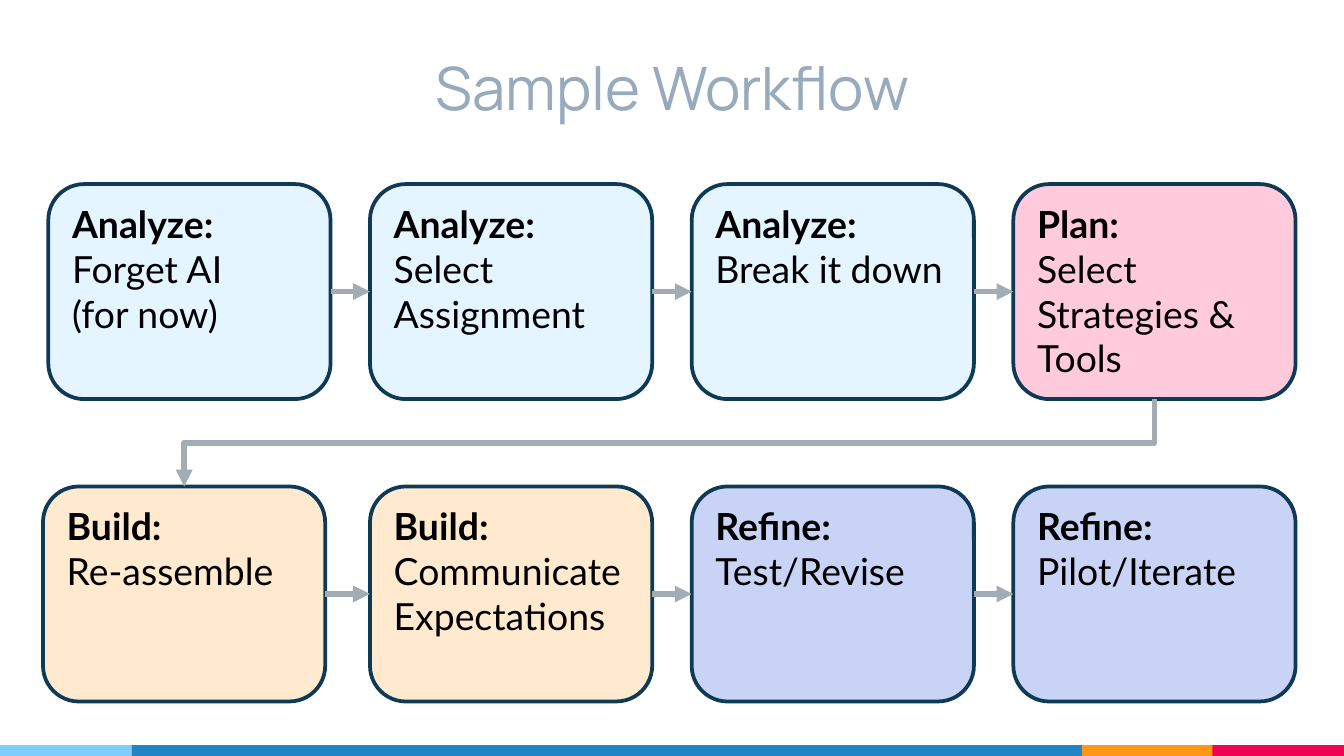
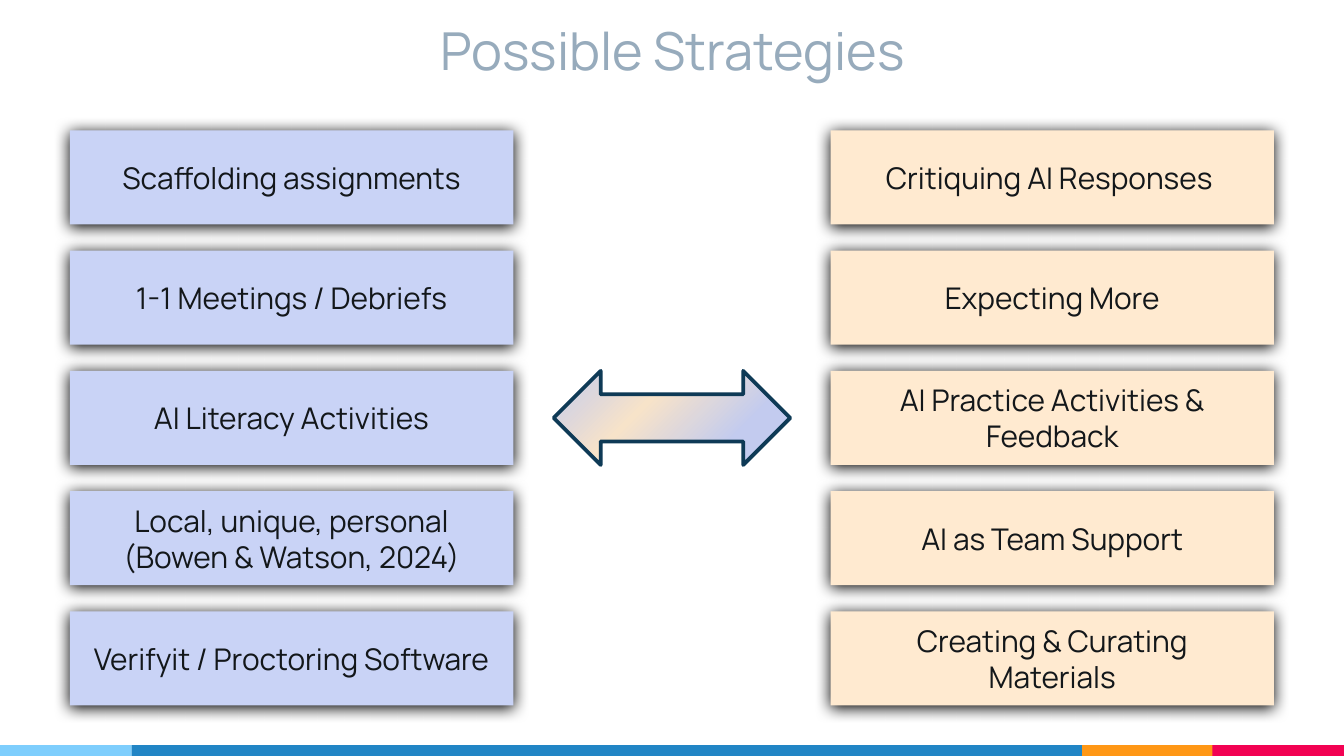
import copy

import pptx
import pptx.dml.color
import pptx.enum.shapes
import pptx.enum.text
import pptx.oxml.ns
import pptx.util
from lxml import etree

Inches, Pt = pptx.util.Inches, pptx.util.Pt
RGBColor = pptx.dml.color.RGBColor
Shape = pptx.enum.shapes.MSO_SHAPE
Connector = pptx.enum.shapes.MSO_CONNECTOR
Anchor = pptx.enum.text.MSO_ANCHOR
Align = pptx.enum.text.PP_ALIGN
qn = pptx.oxml.ns.qn

SKY = RGBColor(0x7E, 0xCE, 0xFD)
BLUE = RGBColor(0x21, 0x85, 0xC5)
ORANGE = RGBColor(0xFF, 0x97, 0x15)
RED = RGBColor(0xF2, 0x02, 0x53)
TITLE_GREY = RGBColor(0x97, 0xAB, 0xBC)
ARROW_GREY = RGBColor(0xA2, 0xAC, 0xB4)
NAVY = RGBColor(0x0E, 0x3A, 0x56)
BLACK = RGBColor(0x00, 0x00, 0x00)
INK = RGBColor(0x13, 0x17, 0x1A)
PALE_BLUE = RGBColor(0xE5, 0xF5, 0xFF)
PINK = RGBColor(0xFF, 0xCA, 0xDC)
PEACH = RGBColor(0xFF, 0xEA, 0xD0)
LAVENDER = RGBColor(0xC9, 0xD3, 0xF6)
BLEND_LAVENDER = RGBColor(0xC3, 0xCB, 0xEF)
BLEND_PEACH = RGBColor(0xF7, 0xE3, 0xC9)

# A 16:9 page
PAGE_WIDTH = 10
PAGE_HEIGHT = PAGE_WIDTH * 9 / 16

# Footer bands: left edge, width, colour
BAND_HEIGHT = 0.08
BANDS = [(8.05, 0.98, ORANGE), (9.02, 0.98, RED), (0, 0.98, SKY), (0.98, 7.07, BLUE)]

PHASE_FILLS = {"Analyze:": PALE_BLUE, "Plan:": PINK, "Build:": PEACH, "Refine:": LAVENDER}
STEP_SIZE = (2.1, 1.6)
# Workflow rows: left edge of the first step, top, steps
WORKFLOW = [
    (0.36, 1.37, [("Analyze:", "Forget AI \n(for now)"),
                  ("Analyze:", "Select Assignment"),
                  ("Analyze:", "Break it down"),
                  ("Plan:", "\nSelect Strategies & Tools")]),
    (0.32, 3.62, [("Build:", "\nRe-assemble"),
                  ("Build:", "Communicate Expectations"),
                  ("Refine:", "Test/Revise"),
                  ("Refine:", "Pilot/Iterate")]),
]

CARD_SIZE = (3.3, 0.7)
# Strategy columns: left edge, colour, cards
STRATEGIES = [
    (0.52, LAVENDER, ["Scaffolding assignments",
                      "1-1 Meetings / Debriefs",
                      "AI Literacy Activities",
                      "Local, unique, personal (Bowen & Watson, 2024)",
                      "Verifyit / Proctoring Software"]),
    (6.18, PEACH, ["Critiquing AI Responses ",
                   "Expecting More",
                   "AI Practice Activities & Feedback",
                   "AI as Team Support",
                   "Creating & Curating\vMaterials"]),
]
BLEND = [(0, BLEND_LAVENDER), (0.38, BLEND_PEACH), (0.75, BLEND_LAVENDER)]


def spread(first, last, count):
    """Evenly spaced positions from first to last."""
    return [first + (last - first) * i / (count - 1) for i in range(count)]


def set_font(font, name, size, color):
    font.name, font.size = name, Pt(size)
    font.color.rgb = color


def add_box(page, kind, left, top, size, fill=None, outline=None):
    box = page.shapes.add_shape(kind, Inches(left), Inches(top), *map(Inches, size))
    box.shadow.inherit = False
    if fill is not None:
        box.fill.solid()
        box.fill.fore_color.rgb = fill
    if outline is None:
        box.line.fill.background()
    else:
        box.line.color.rgb = outline
        box.line.width = Pt(2)
    return box


def add_page(deck, title, title_top, title_size):
    """Add a blank page with the footer bands and a title."""
    page = deck.slides.add_slide(deck.slide_layouts[6])
    for left, width, color in BANDS:
        add_box(page, Shape.RECTANGLE, left, PAGE_HEIGHT - BAND_HEIGHT,
                (width, BAND_HEIGHT), color)
    box = page.shapes.add_textbox(Inches(1.47), Inches(title_top), Inches(7.07), Inches(0.94))
    frame = box.text_frame
    frame.word_wrap = True
    frame.vertical_anchor = Anchor.BOTTOM
    frame.margin_top = frame.margin_bottom = Inches(0.1)
    para = frame.paragraphs[0]
    para.text = title
    para.alignment = Align.CENTER
    set_font(para.font, "Manrope", title_size, TITLE_GREY)
    return page


def add_step(page, left, top, phase, task):
    box = add_box(page, Shape.ROUNDED_RECTANGLE, left, top, STEP_SIZE, PHASE_FILLS[phase], NAVY)
    frame = box.text_frame
    frame.word_wrap = True
    frame.vertical_anchor = Anchor.TOP
    para = frame.paragraphs[0]
    para.alignment = Align.LEFT
    set_font(para.font, "Lato", 20, BLACK)
    heading = para.add_run()
    heading.text = f"{phase} "
    heading.font.bold = True
    for number, line in enumerate(task.split("\n")):
        if number:
            para.add_line_break()
        if line:
            para.add_run().text = line
    return box


def link(page, kind, start, start_site, end, end_site):
    """Join two boxes with an arrow; sites run top, left, bottom, right."""
    arrow = page.shapes.add_connector(kind, 0, 0, 0, 0)
    arrow.begin_connect(start, start_site)
    arrow.end_connect(end, end_site)
    arrow.line.color.rgb = ARROW_GREY
    arrow.line.width = Pt(3)
    properties = arrow._element.spPr
    etree.SubElement(properties.find(qn("a:ln")), qn("a:tailEnd"), type="triangle")
    etree.SubElement(properties, qn("a:effectLst"))
    return arrow


def turn_downward(arrow):
    """Make an elbow that runs down and to the left leave and arrive vertically."""
    middle_x = arrow.left + arrow.width // 2
    middle_y = arrow.top + arrow.height // 2
    arrow.width, arrow.height = arrow.height, arrow.width
    arrow.left = middle_x - arrow.width // 2
    arrow.top = middle_y - arrow.height // 2
    frame = arrow._element.spPr.find(qn("a:xfrm"))
    frame.attrib.pop("flipH", None)
    frame.set("rot", str(90 * 60000))


def add_card(page, left, top, color, text):
    box = add_box(page, Shape.RECTANGLE, left, top, CARD_SIZE, color)
    effects = box._element.spPr.find(qn("a:effectLst"))
    shadow = etree.SubElement(effects, qn("a:outerShdw"), blurRad=str(Pt(8.5)),
                              dist=str(Pt(1)), dir=str(90 * 60000), rotWithShape="0")
    etree.SubElement(shadow, qn("a:srgbClr"), val=str(BLACK))
    frame = box.text_frame
    frame.word_wrap = True
    frame.vertical_anchor = Anchor.MIDDLE
    para = frame.paragraphs[0]
    para.text = text
    para.alignment = Align.CENTER
    set_font(para.font, "Manrope", 16, INK)


def fill_blend(shape, stops, angle):
    """Fill with a linear gradient, the angle counted clockwise."""
    shape.fill.gradient()
    shape.fill.gradient_angle = 360 - angle
    stop_list = shape._element.spPr.find(qn("a:gradFill")).find(qn("a:gsLst"))
    while len(stop_list) < len(stops):
        stop_list.append(copy.deepcopy(stop_list[-1]))
    for stop, (position, color) in zip(shape.fill.gradient_stops, stops):
        stop.position = position
        stop.color.rgb = color


def build_workflow(deck):
    page = add_page(deck, "Sample Workflow", 0.07, 32)
    columns = spread(0.36, 7.54, 4)
    rows = []
    for first_left, top, steps in WORKFLOW:
        lefts = [first_left] + columns[1:]
        rows.append([add_step(page, left, top, *step) for left, step in zip(lefts, steps)])
    for row in rows:
        for start, end in zip(row, row[1:]):
            link(page, Connector.STRAIGHT, start, 3, end, 1)
    turn_downward(link(page, Connector.ELBOW, rows[0][-1], 2, rows[1][0], 0))


def build_strategies(deck):
    page = add_page(deck, "Possible Strategies", -0.24, 28)
    tops = spread(0.97, 4.55, 5)
    for left, color, cards in STRATEGIES:
        for top, text in zip(tops, cards):
            add_card(page, left, top, color, text)
    arrow = add_box(page, Shape.LEFT_RIGHT_ARROW, 4.12, tops[2], (1.76, 0.7), outline=NAVY)
    fill_blend(arrow, BLEND, 45)


def main():
    deck = pptx.Presentation()
    deck.slide_width, deck.slide_height = Inches(PAGE_WIDTH), Inches(PAGE_HEIGHT)
    build_workflow(deck)
    build_strategies(deck)
    deck.save("out.pptx")


if __name__ == "__main__":
    main()
